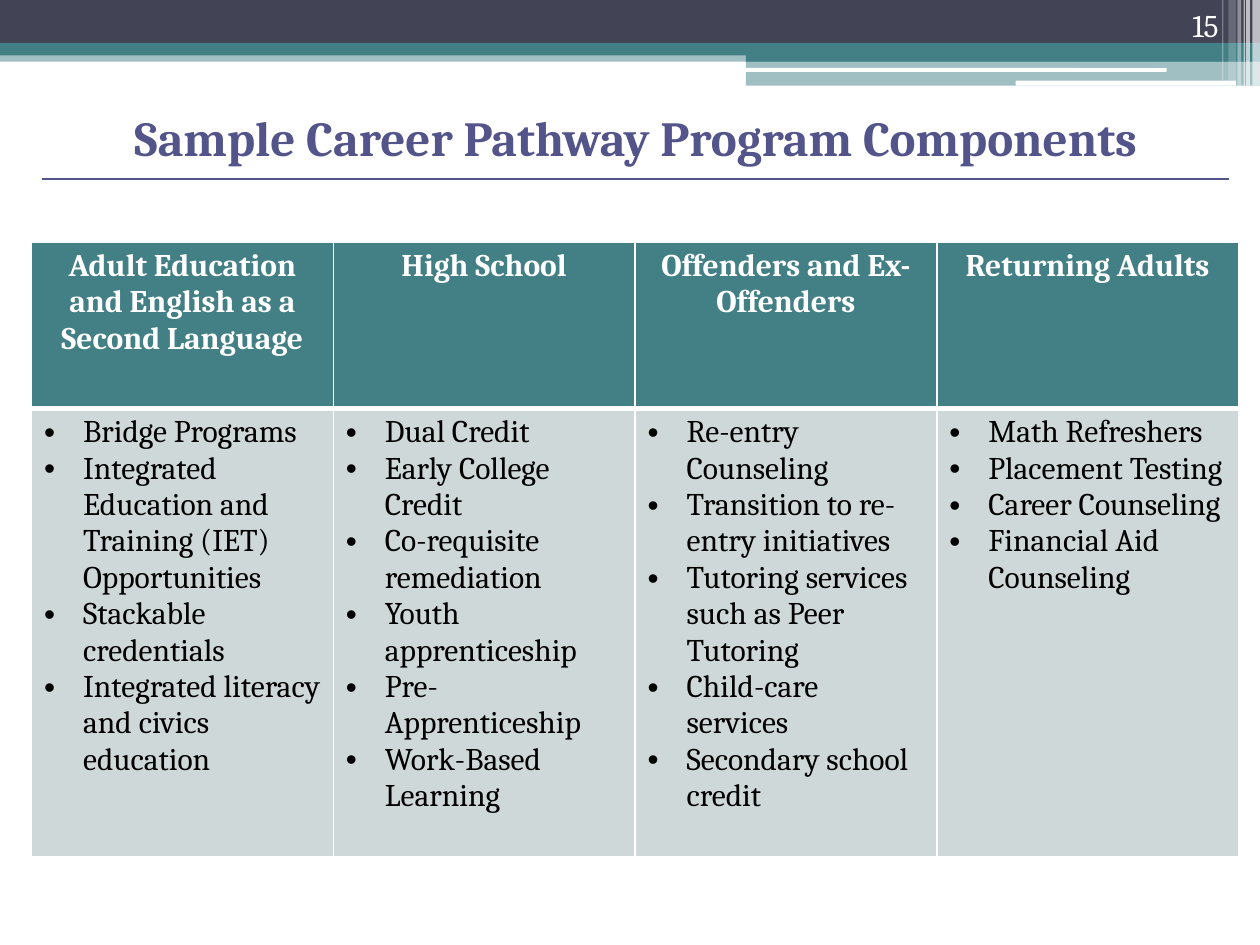
from dataclasses import dataclass

from lxml.etree import SubElement
from pptx import Presentation
from pptx.dml.color import RGBColor
from pptx.enum.shapes import MSO_CONNECTOR, MSO_SHAPE
from pptx.enum.text import MSO_ANCHOR, PP_ALIGN
from pptx.oxml.ns import qn
from pptx.util import Inches, Pt

COLORS = {
    "navy": "424456",
    "teal": "438086",
    "violet": "53548A",
    "body": "CFD8D9",
    "white": "FFFFFF",
    "black": "000000",
}
FONT = "Cambria"


@dataclass
class Band:
    left: float
    top: float
    width: float
    height: float
    color: str
    opacity: int = 100
    rounded: bool = False


@dataclass
class Audience:
    name: str
    components: list[str]


BANDS = [
    Band(0, 0.4, 10, 0.09, "teal", 50),
    Band(0, 0, 10, 0.34, "navy"),
    Band(0, 0.34, 10, 0.1, "teal"),
    Band(5.92, 0.39, 4.08, 0.1, "teal"),
    Band(5.92, 0.48, 4.08, 0.2, "teal", 50),
    Band(5.91, 0.54, 3.35, 0.03, "white", rounded=True),
    Band(8.06, 0.64, 1.75, 0.04, "white", rounded=True),
    Band(9.94, 0, 0.06, 0.68, "white", 65),
    Band(9.89, 0, 0.03, 0.68, "white", 65),
    Band(9.87, 0, 0.01, 0.68, "white", 60),
    Band(9.82, 0, 0.03, 0.68, "white", 40),
    Band(9.75, 0, 0.06, 0.64, "white", 20),
    Band(9.7, 0, 0.01, 0.64, "white", 30),
]

AUDIENCES = [
    Audience("Adult Education and English as a Second Language", [
        "Bridge Programs",
        "Integrated Education and Training (IET) Opportunities",
        "Stackable credentials",
        "Integrated literacy and civics education",
    ]),
    Audience("High School", [
        "Dual Credit",
        "Early College Credit",
        "Co-requisite remediation",
        "Youth apprenticeship",
        "Pre-Apprenticeship",
        "Work-Based Learning",
    ]),
    Audience("Offenders and Ex-Offenders", [
        "Re-entry Counseling",
        "Transition to re-entry initiatives",
        "Tutoring services such as Peer Tutoring",
        "Child-care services",
        "Secondary school credit",
    ]),
    Audience("Returning Adults", [
        "Math Refreshers",
        "Placement Testing",
        "Career Counseling",
        "Financial Aid Counseling",
    ]),
]


def rgb(color: str) -> RGBColor:
    return RGBColor.from_string(COLORS[color])


def add_run(paragraph, text: str, size: float, color: str, bold: bool = False) -> None:
    run = paragraph.add_run()
    run.text = text
    run.font.name = FONT
    run.font.size = Pt(size)
    run.font.bold = bold
    run.font.color.rgb = rgb(color)


def add_band(slide, band: Band) -> None:
    kind = MSO_SHAPE.ROUNDED_RECTANGLE if band.rounded else MSO_SHAPE.RECTANGLE
    shape = slide.shapes.add_shape(
        kind, Inches(band.left), Inches(band.top), Inches(band.width), Inches(band.height)
    )
    shape.shadow.inherit = False
    shape.line.fill.background()
    shape.fill.solid()
    shape.fill.fore_color.rgb = rgb(band.color)
    if band.opacity < 100:
        fill_color = shape.element.spPr.find(qn("a:solidFill"))[0]
        SubElement(fill_color, qn("a:alpha"), val=str(band.opacity * 1000))


def add_text(slide, text: str, left: float, top: float, width: float, height: float,
             size: float, color: str, align: PP_ALIGN, anchor: MSO_ANCHOR,
             bold: bool = False) -> None:
    box = slide.shapes.add_textbox(Inches(left), Inches(top), Inches(width), Inches(height))
    frame = box.text_frame
    frame.word_wrap = True
    frame.vertical_anchor = anchor
    paragraph = frame.paragraphs[0]
    paragraph.alignment = align
    add_run(paragraph, text, size, color, bold)


def add_rule(slide, left: float, right: float, top: float) -> None:
    rule = slide.shapes.add_connector(
        MSO_CONNECTOR.STRAIGHT, Inches(left), Inches(top), Inches(right), Inches(top)
    )
    rule.line.color.rgb = rgb("violet")
    rule.line.width = Pt(0.75)
    SubElement(rule.element.spPr, qn("a:effectLst"))


def style_cell(cell, color: str, top: float, bottom: float) -> None:
    properties = cell._tc.get_or_add_tcPr()
    for side, width in {"lnL": 1, "lnR": 1, "lnT": top, "lnB": bottom}.items():
        border = SubElement(properties, qn(f"a:{side}"), w=str(Pt(width)))
        SubElement(SubElement(border, qn("a:solidFill")), qn("a:srgbClr"), val=COLORS["white"])
    cell.fill.solid()
    cell.fill.fore_color.rgb = rgb(color)


def add_bullet(paragraph) -> None:
    properties = paragraph._p.get_or_add_pPr()
    properties.set("marL", str(Inches(0.31)))
    properties.set("indent", str(Inches(-0.31)))
    SubElement(properties, qn("a:buFont"), typeface="Arial")
    SubElement(properties, qn("a:buChar"), char="•")


def add_components_table(slide, audiences: list[Audience]) -> None:
    table = slide.shapes.add_table(
        2, len(audiences), Inches(0.25), Inches(1.92), Inches(9.58), Inches(4.88)
    ).table
    table.rows[0].height = Inches(1.32)
    table.rows[1].height = Inches(3.56)
    for column, audience in enumerate(audiences):
        header, body = table.cell(0, column), table.cell(1, column)
        style_cell(header, "teal", top=1, bottom=3)
        style_cell(body, "body", top=3, bottom=1)
        heading = header.text_frame.paragraphs[0]
        heading.alignment = PP_ALIGN.CENTER
        add_run(heading, audience.name, 18, "white", bold=True)
        frame = body.text_frame
        for index, component in enumerate(audience.components):
            paragraph = frame.add_paragraph() if index else frame.paragraphs[0]
            add_bullet(paragraph)
            add_run(paragraph, component, 18, "black")


def main() -> None:
    presentation = Presentation()
    presentation.slide_width = Inches(10)
    presentation.slide_height = Inches(7.5)
    slide = presentation.slides.add_slide(presentation.slide_layouts[6])
    for band in BANDS:
        add_band(slide, band)
    add_text(slide, "Sample Career Pathway Program Components", 0.17, 0.5, 9.75, 1.17,
             28, "violet", PP_ALIGN.CENTER, MSO_ANCHOR.MIDDLE, bold=True)
    add_components_table(slide, AUDIENCES)
    add_text(slide, "15", 8.94, 0, 0.83, 0.4, 18, "white", PP_ALIGN.RIGHT, MSO_ANCHOR.BOTTOM)
    add_rule(slide, 0.33, 9.75, 1.42)
    presentation.save("out.pptx")


if __name__ == "__main__":
    main()
